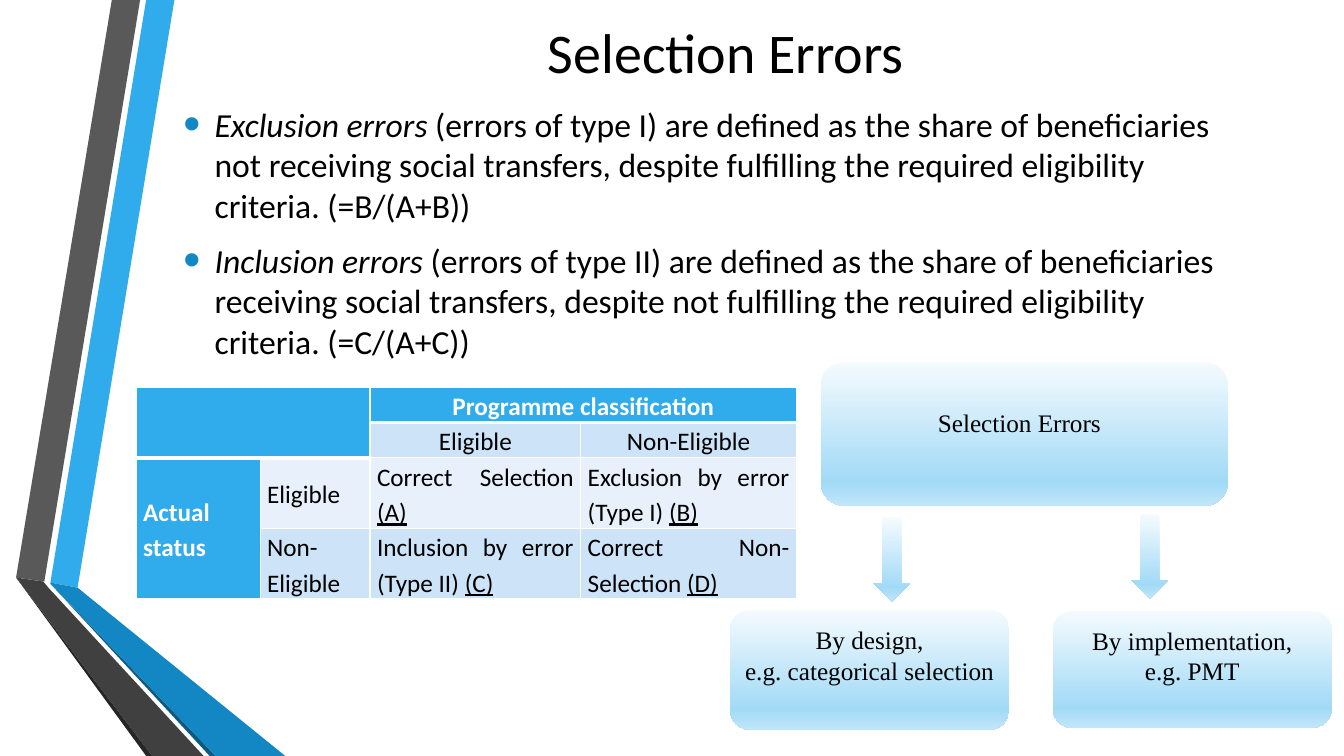
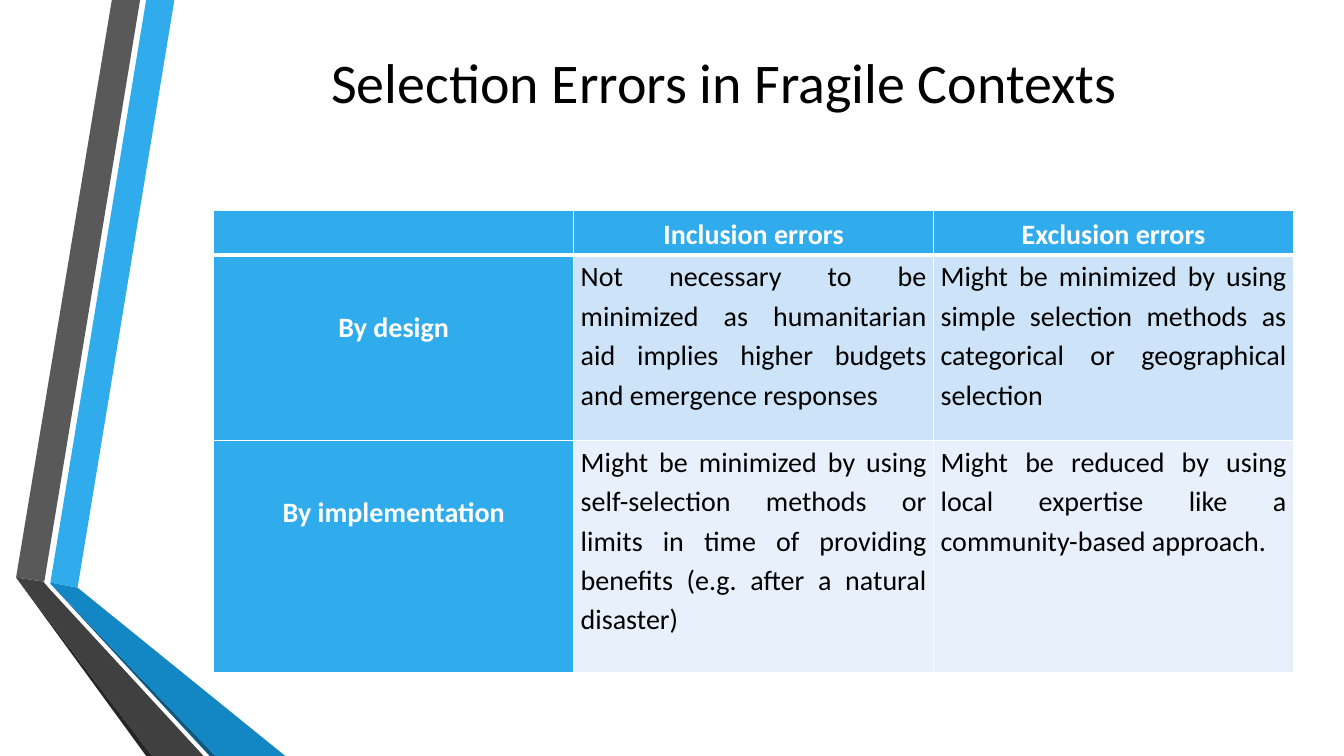
from copy import deepcopy

from lxml.etree import SubElement
from pptx import Presentation
from pptx.dml.color import RGBColor
from pptx.enum.shapes import MSO_SHAPE
from pptx.enum.text import MSO_ANCHOR, PP_ALIGN
from pptx.oxml.ns import qn
from pptx.util import Inches, Pt


class Theme:
    sky, deep, navy = "30ACEC", "1287C3", "0C5A82"
    black, coal, dark, gray, white = "000000", "262626", "404040", "595959", "FFFFFF"
    light, pale = "CDE3F8", "E8F1FB"
    fade = [(0, "F5FBFE"), (0.83, "A2DAF6"), (1, "C1E6F9")]
    sans, serif = "Calibri", "Times New Roman"
    title, body, cell, label, bullet = 40, 24, 18, 18, 145
    wide = 20
    thin, thick = 1, 3


LEFT, MID, JUST = PP_ALIGN.LEFT, PP_ALIGN.CENTER, PP_ALIGN.JUSTIFY
TOP, CENTER = MSO_ANCHOR.TOP, MSO_ANCHOR.MIDDLE

BANDS = [
    (Theme.sky, [(0.5, 5.78), (0.77, 5.83), (1.73, 0), (1.45, 0)]),
    (Theme.gray, [(1.39, 0), (1.11, 0), (0.16, 5.73), (0.44, 5.77)]),
    (Theme.coal, [(0.16, 5.73), (1.45, 7.5), (1.51, 7.5)]),
    (Theme.navy, [(0.5, 5.79), (2.08, 7.5), (2.14, 7.5)]),
    (Theme.deep, [(0.5, 5.78), (0.5, 5.79), (2.14, 7.5), (2.83, 7.5), (0.77, 5.83)]),
    (Theme.dark, [(2.02, 7.5), (0.48, 5.83), (0.43, 5.77), (0.16, 5.73), (1.51, 7.5)]),
]

# A paragraph is a list of runs; a run is its text and its own font values.
POINTS = [
    [("Exclusion errors", {"italic": True}),
     (" (errors of type I) are defined as the share of beneficiaries not receiving "
      "social transfers, despite fulfilling the required eligibility criteria. (=B/(A+B))", {})],
    [("Inclusion errors", {"italic": True}),
     (" (errors of type II) are defined as the share of beneficiaries receiving "
      "social transfers, despite not fulfilling the required eligibility criteria. (=C/(A+C))", {})],
]

# Place, lines, and left, top, right, bottom insets.
BOXES = [
    ((8.14, 3.59, 4.04, 1.43), ["Selection Errors"], (0, 0.38, 0.1, 0)),
    ((7.24, 6.05, 2.77, 1.19), ["By design,", "e.g. categorical selection"], (0, 0.09, 0, 0)),
    ((10.44, 6.06, 2.77, 1.16), ["By implementation,", "e.g. PMT"], (0, 0.09, 0, 0)),
]
ARROWS = [(8.66, 5.13, 0.37, 0.84), (11.22, 5.1, 0.37, 0.84)]

# Cell looks: fill, font colour, bold, alignment, anchor, top inset.
LOOKS = {
    "head": (Theme.sky, Theme.white, True, MID, TOP, 0),
    "top": (Theme.sky, Theme.white, True, MID, CENTER, 0),
    "side": (Theme.sky, Theme.white, True, JUST, CENTER, 0),
    "row": (Theme.sky, Theme.white, True, MID, TOP, 0.5),
    "sub": (Theme.light, Theme.black, False, MID, TOP, 0),
    "light": (Theme.light, Theme.black, False, JUST, CENTER, 0),
    "pale": (Theme.pale, Theme.black, False, JUST, CENTER, 0),
    "light top": (Theme.light, Theme.black, False, JUST, TOP, 0),
    "pale top": (Theme.pale, Theme.black, False, JUST, TOP, 0),
}

# A cell is its look, its text and, where there is one, an underlined mark.
MATRIX = {
    "at": (1.35, 3.84),
    "size": Theme.cell,
    "cols": [1.23, 1.09, 2.09, 2.14],
    "rows": [0.35, 0.35, 0.7, 0.7],
    "spans": [((0, 0), (1, 1)), ((0, 2), (0, 3)), ((2, 0), (3, 0))],
    "rules": {(0, 0), (1, 0), (1, 1), (0, 2), (0, 3)},
    "cells": [
        [("head", ""), ("head", ""), ("head", "Programme classification"), ("head", "")],
        [("head", ""), ("head", ""), ("sub", "Eligible"), ("sub", "Non-Eligible")],
        [("side", "Actual status"), ("pale", "Eligible"),
         ("pale", "Correct Selection ", "(A)"),
         ("pale", "Exclusion by error (Type I) ", "(B)")],
        [("side", ""), ("light", "Non-Eligible"),
         ("light", "Inclusion by error (Type II) ", "(C)"),
         ("light", "Correct Non-Selection ", "(D)")],
    ],
}
FRAGILE = {
    "at": (2.12, 2.09),
    "size": Theme.wide,
    "cols": [3.57] * 3,
    "rows": [0.44, 1.84, 2.3],
    "spans": [],
    "rules": {(0, 0), (0, 1), (0, 2)},
    "cells": [
        [("top", ""), ("top", "Inclusion errors"), ("top", "Exclusion errors")],
        [("row", "By design"),
         ("light top", "Not necessary to be minimized as humanitarian aid implies "
                       "higher budgets and emergence responses"),
         ("light top", "Might be minimized by using simple selection methods as "
                       "categorical or geographical selection")],
        [("row", "By implementation"),
         ("pale top", "Might be minimized by using self-selection methods or limits in "
                      "time of providing benefits (e.g. after a natural disaster)"),
         ("pale top", "Might be reduced by using local expertise like a "
                      "community-based approach.")],
    ],
}


def rgb(code):
    return RGBColor.from_string(code)


def put(item, **values):
    for name, value in values.items():
        setattr(item, name, value)


def inset(item, sides):
    for name, side in zip(("left", "top", "right", "bottom"), sides):
        setattr(item, "margin_" + name, Inches(side))


def write(frame, paras, size, font=Theme.sans, color=Theme.black, align=LEFT,
          bold=False, **form):
    """Fill a text frame; form holds paragraph values. Return its paragraphs."""
    for i, runs in enumerate(paras):
        para = frame.add_paragraph() if i else frame.paragraphs[0]
        put(para, alignment=align, **form)
        for text, extra in runs:
            run = para.add_run()
            run.text = text
            put(run.font, name=font, size=Pt(size), bold=bold, **extra)
            run.font.color.rgb = rgb(color)
    return frame.paragraphs


def add_box(slide, at, anchor):
    frame = slide.shapes.add_textbox(*map(Inches, at)).text_frame
    put(frame, word_wrap=True, vertical_anchor=anchor)
    return frame


def start(deck, title, at):
    """Add a slide with the side bands and its title."""
    slide = deck.slides.add_slide(deck.slide_layouts[6])
    for color, dots in BANDS:
        first, *rest = [(Inches(x), Inches(y)) for x, y in dots]
        pen = slide.shapes.build_freeform(*first)
        pen.add_line_segments(rest)
        band = pen.convert_to_shape()
        band.shadow.inherit = False
        band.fill.solid()
        band.fill.fore_color.rgb = rgb(color)
        band.line.fill.background()
    write(add_box(slide, at, CENTER), [[(title, {})]], Theme.title, align=MID)
    return slide


def add_list(slide, at):
    frame = add_box(slide, at, TOP)
    inset(frame, (0.1, 0, 0.1, 0))
    for i, para in enumerate(write(frame, POINTS, Theme.body)):
        para.space_before = Pt(4.8 if i else 0)
        para.space_after = Pt(6)
        props = para._p.get_or_add_pPr()
        props.set("marL", str(Inches(0.31)))
        props.set("indent", str(-Inches(0.31)))
        SubElement(SubElement(props, qn("a:buClr")), qn("a:srgbClr")).set("val", Theme.deep)
        SubElement(props, qn("a:buSzPct")).set("val", str(Theme.bullet * 1000))
        SubElement(props, qn("a:buFont")).set("typeface", "Arial")
        SubElement(props, qn("a:buChar")).set("char", "•")


def add_faded(slide, kind, at):
    """Add a shape with the three-stop vertical gradient."""
    shape = slide.shapes.add_shape(kind, *map(Inches, at))
    shape.shadow.inherit = False
    shape.line.fill.background()
    shape.fill.gradient()
    shape.fill.gradient_angle = 270
    stops = shape.element.spPr.find(".//" + qn("a:gsLst"))
    stops.append(deepcopy(stops[-1]))
    for stop, (spot, color) in zip(shape.fill.gradient_stops, Theme.fade):
        stop.position = spot
        stop.color.rgb = rgb(color)
    return shape


def add_tree(slide):
    for at, lines, sides in BOXES:
        frame = add_faded(slide, MSO_SHAPE.FLOWCHART_ALTERNATE_PROCESS, at).text_frame
        put(frame, word_wrap=True, vertical_anchor=TOP)
        inset(frame, sides)
        write(frame, [[(line, {})] for line in lines], Theme.label, Theme.serif, align=MID)
    for at in ARROWS:
        add_faded(slide, MSO_SHAPE.DOWN_ARROW, at)


def edge(cell, top, bottom):
    """Draw white borders; top and bottom are widths in points."""
    props = cell._tc.get_or_add_tcPr()
    widths = {"L": Theme.thin, "R": Theme.thin, "T": top, "B": bottom}
    for i, (side, width) in enumerate(widths.items()):
        line = SubElement(props, qn("a:ln" + side), w=str(Pt(width)))
        SubElement(SubElement(line, qn("a:solidFill")), qn("a:srgbClr")).set("val", Theme.white)
        props.insert(i, line)


def add_grid(slide, spec):
    cols, rows, rules = spec["cols"], spec["rows"], spec["rules"]
    place = map(Inches, (*spec["at"], sum(cols), sum(rows)))
    table = slide.shapes.add_table(len(rows), len(cols), *place).table
    for col, width in zip(table.columns, cols):
        col.width = Inches(width)
    for row, height in zip(table.rows, rows):
        row.height = Inches(height)
    for first, last in spec["spans"]:
        table.cell(*first).merge(table.cell(*last))
    for r, line in enumerate(spec["cells"]):
        for c, (look, text, *marks) in enumerate(line):
            back, color, bold, align, anchor, drop = LOOKS[look]
            cell = table.cell(r, c)
            cell.fill.solid()
            cell.fill.fore_color.rgb = rgb(back)
            cell.vertical_anchor = anchor
            inset(cell, (0.07, drop, 0.07, 0))
            edge(cell, *(Theme.thick if spot in rules else Theme.thin
                         for spot in ((r - 1, c), (r, c))))
            if text:
                runs = [(text, {})] + [(mark, {"underline": True}) for mark in marks]
                write(cell.text_frame, [runs], spec["size"], color=color, align=align,
                      bold=bold, line_spacing=1.15)


def main():
    deck = Presentation()
    put(deck, slide_width=Inches(13.33), slide_height=Inches(7.5))
    slide = start(deck, "Selection Errors", (1.72, 0.01, 10.96, 1))
    add_list(slide, (1.72, 1.03, 10.62, 2.6))
    add_tree(slide)
    add_grid(slide, MATRIX)
    slide = start(deck, "Selection Errors in Fragile Contexts", (1.7, 0.26, 10.96, 1.09))
    add_grid(slide, FRAGILE)
    deck.save("out.pptx")


if __name__ == "__main__":
    main()
